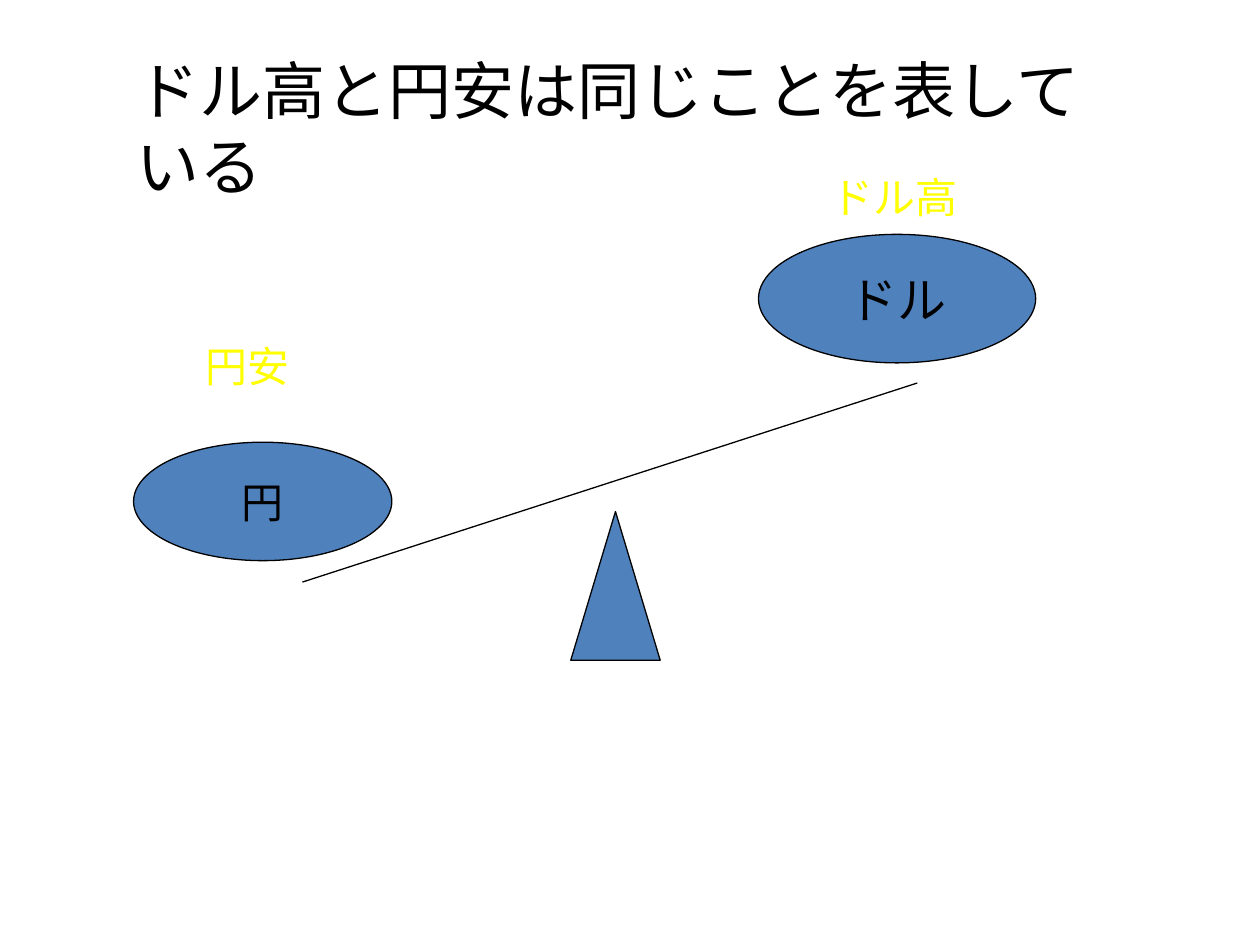
"""Build a slide showing the dollar and the yen on a seesaw."""
from lxml.etree import SubElement
from pptx import Presentation
from pptx.dml.color import RGBColor
from pptx.enum.shapes import MSO_CONNECTOR, MSO_SHAPE
from pptx.enum.text import MSO_ANCHOR, MSO_AUTO_SIZE, PP_ALIGN
from pptx.oxml.ns import qn
from pptx.util import Inches, Pt

COLORS = {"black": "000000", "blue": "4F81BD", "yellow": "FFFF00"}


def rgb(name):
    return RGBColor.from_string(COLORS[name])


def write(sp, text, size, color, align, anchor, wrap):
    tf = sp.text_frame
    frame = {"auto_size": MSO_AUTO_SIZE.NONE, "vertical_anchor": anchor, "word_wrap": wrap}
    for name, value in frame.items():
        setattr(tf, name, value)
    p = tf.paragraphs[0]
    p.alignment = align
    r = p.add_run()
    r.text = text
    for name, value in {"name": "Times New Roman", "size": Pt(size)}.items():
        setattr(r.font, name, value)
    r.font.color.rgb = rgb(color)


prs = Presentation()
prs.slide_width, prs.slide_height = Inches(10), Inches(7.5)
s = prs.slides.add_slide(prs.slide_layouts[5])

title = s.shapes.title
box = {"left": 0.98, "top": 0.36, "width": 8.03, "height": 0.7}
for name, value in box.items():
    setattr(title, name, Inches(value))
write(title, "ドル高と円安は同じことを表している", 36, "black",
      PP_ALIGN.LEFT, MSO_ANCHOR.TOP, True)

beam = s.shapes.add_connector(
    MSO_CONNECTOR.STRAIGHT, Inches(2.4), Inches(4.62), Inches(7.28), Inches(3.04))
beam.line.color.rgb = rgb("black")
beam.line.width = Pt(0.75)
SubElement(beam.element.spPr, qn("a:effectLst"))

parts = [
    (MSO_SHAPE.ISOSCELES_TRIANGLE, (4.53, 4.06, 0.71, 1.18), "", 0),
    (MSO_SHAPE.OVAL, (6.02, 1.86, 2.2, 1.02), "ドル", 28),
    (MSO_SHAPE.OVAL, (1.06, 3.51, 2.05, 0.94), "円", 24),
]
for kind, place, text, size in parts:
    sp = s.shapes.add_shape(kind, *map(Inches, place))
    sp.shadow.inherit = False
    sp.fill.solid()
    sp.fill.fore_color.rgb = rgb("blue")
    sp.line.color.rgb = rgb("black")
    sp.line.width = Pt(0.75)
    if text:
        write(sp, text, size, "black", PP_ALIGN.CENTER, MSO_ANCHOR.MIDDLE, False)

labels = [("ドル高", (6.5, 1.31, 2.52, 0.5)), ("円安", (1.53, 2.65, 1.81, 0.5))]
for text, place in labels:
    sp = s.shapes.add_textbox(*map(Inches, place))
    write(sp, text, 24, "yellow", PP_ALIGN.LEFT, MSO_ANCHOR.TOP, True)

prs.save("out.pptx")
